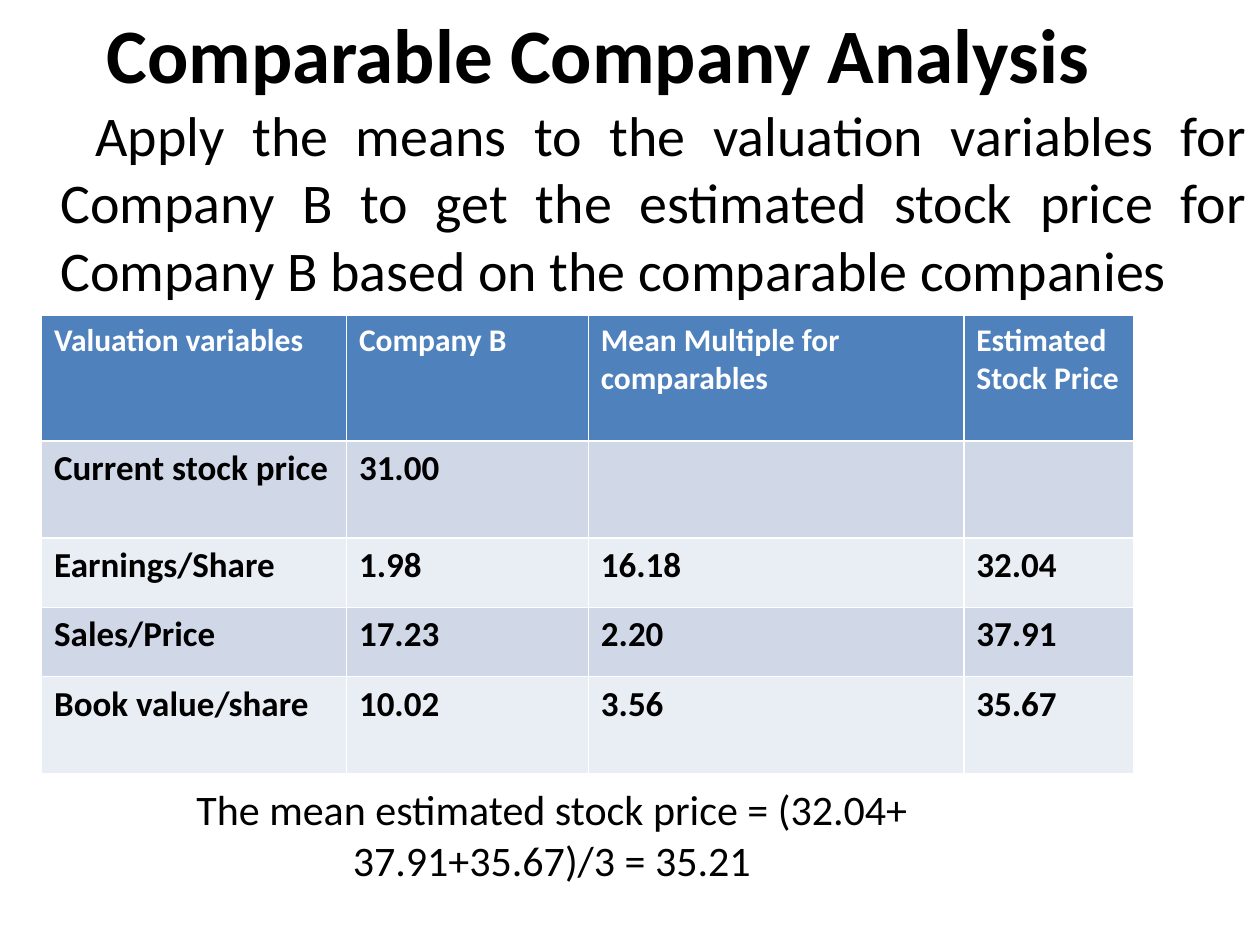
import pptx
import pptx.util
import pptx.dml.color
import pptx.enum.text
from pptx.util import Inches

FONT = "Calibri"
BLACK = "000000"
WHITE = "FFFFFF"
HEADER_FILL = "4F81BD"
BAND_FILLS = ["D0D8E8", "E9EDF4"]
COLUMN_WIDTHS = [2.42, 1.92, 2.98, 1.35]
ROW_HEIGHTS = [1, 0.77, 0.55, 0.55, 0.77]
VALUATION_ROWS = [
    ["Valuation variables", "Company B", "Mean Multiple for\ncomparables",
     "Estimated\nStock Price"],
    ["Current stock price", "31.00", "", ""],
    ["Earnings/Share", "1.98", "16.18", "32.04"],
    ["Sales/Price", "17.23", "2.20", "37.91"],
    ["Book value/share", "10.02", "3.56", "35.67"],
]


def color(hex_value):
    return pptx.dml.color.RGBColor.from_string(hex_value)


def style_text(frame, size, hex_value, bold=False):
    for para in frame.paragraphs:
        para.font.size = pptx.util.Pt(size)
        for span in para.runs:
            span.font.name = FONT
            span.font.size = pptx.util.Pt(size)
            span.font.bold = bold
            span.font.color.rgb = color(hex_value)


def add_text(page, text, left, top, width, height, size, align, bold=False):
    box = page.shapes.add_textbox(
        Inches(left), Inches(top), Inches(width), Inches(height))
    frame = box.text_frame
    frame.word_wrap = True
    frame.text = text
    frame.paragraphs[0].alignment = align
    style_text(frame, size, BLACK, bold)
    return box


def indent_first_line(para, left, first_line):
    properties = para._p.get_or_add_pPr()
    properties.set("marL", str(Inches(left)))
    properties.set("indent", str(Inches(first_line)))


def add_valuation_table(page, left, top):
    table = page.shapes.add_table(
        len(ROW_HEIGHTS), len(COLUMN_WIDTHS), Inches(left), Inches(top),
        Inches(sum(COLUMN_WIDTHS)), Inches(sum(ROW_HEIGHTS))).table
    for column, width in zip(table.columns, COLUMN_WIDTHS):
        column.width = Inches(width)
    for row, height in zip(table.rows, ROW_HEIGHTS):
        row.height = Inches(height)
    for row_index, values in enumerate(VALUATION_ROWS):
        header = row_index == 0
        fill = HEADER_FILL if header else BAND_FILLS[(row_index - 1) % 2]
        for column_index, value in enumerate(values):
            cell = table.cell(row_index, column_index)
            cell.fill.solid()
            cell.fill.fore_color.rgb = color(fill)
            cell.text_frame.text = value
            style_text(cell.text_frame, 18 if header else 20,
                       WHITE if header else BLACK, True)


def main():
    deck = pptx.Presentation()
    deck.slide_width = Inches(10)
    deck.slide_height = Inches(7.5)
    page = deck.slides.add_slide(deck.slide_layouts[6])
    align = pptx.enum.text.PP_ALIGN

    title = add_text(page, "Comparable Company Analysis",
                     0, 0, 9.5, 0.83, 44, align.CENTER, True)
    title.text_frame.vertical_anchor = pptx.enum.text.MSO_ANCHOR.MIDDLE

    instruction = add_text(
        page,
        "Apply the means to the valuation variables for Company B to get "
        "the estimated stock price for Company B based on the comparable "
        "companies",
        0, 0.75, 10, 1.75, 32, align.JUSTIFY)
    indent_first_line(instruction.text_frame.paragraphs[0], 0.38, 0.28)

    add_valuation_table(page, 0.33, 2.5)
    add_text(page,
             "The mean estimated stock price = (32.04+ 37.91+35.67)/3 = 35.21",
             0.42, 6.17, 7.92, 0.91, 24, align.CENTER)
    deck.save("out.pptx")


if __name__ == "__main__":
    main()
